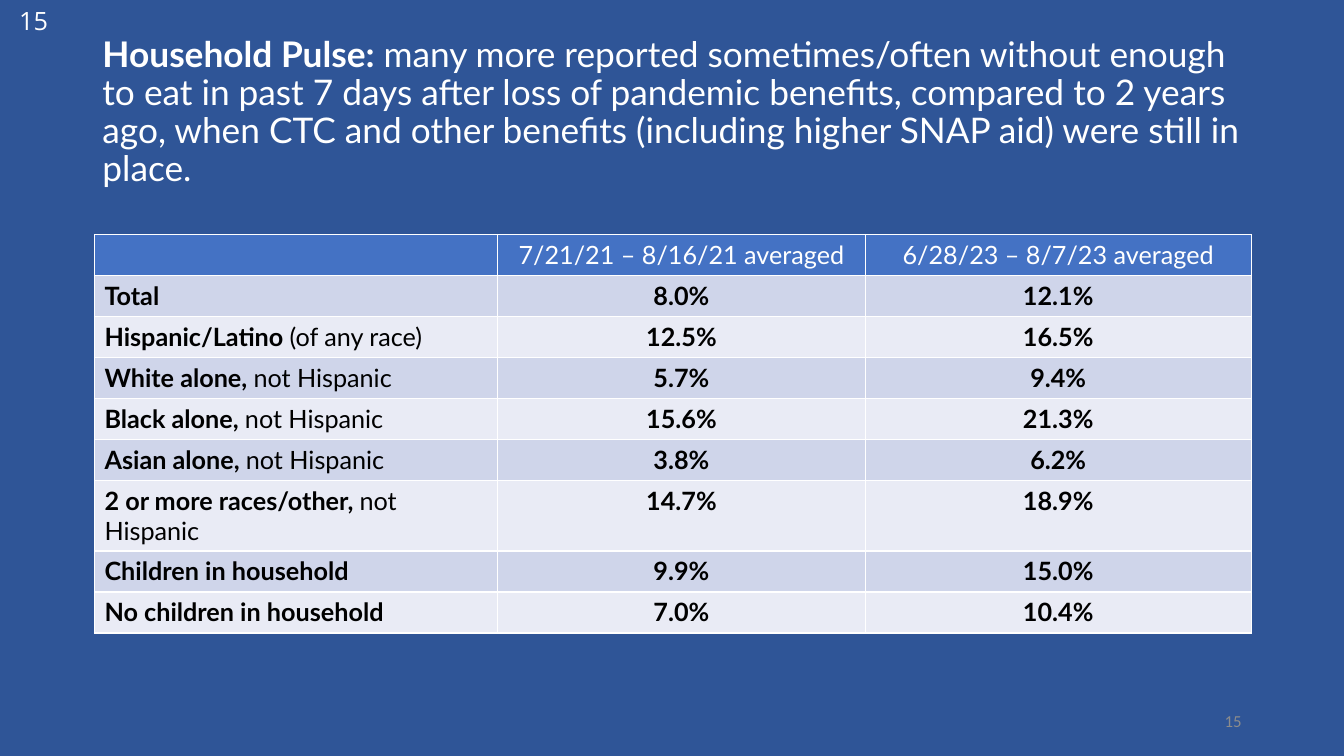
from dataclasses import dataclass

from lxml.etree import SubElement
from pptx import Presentation
from pptx.dml.color import RGBColor
from pptx.enum.text import MSO_ANCHOR as Anchor, MSO_AUTO_SIZE as AutoSize, PP_ALIGN as Align
from pptx.oxml.ns import qn
from pptx.util import Pt

COLOURS = {
    "background": "2F5597",
    "white": "FFFFFF",
    "black": "000000",
    "header": "4472C4",
    "odd_row": "CFD5EA",
    "even_row": "E9EBF5",
    "footer": "8C8C8C",
}
COLUMN_WIDTHS = (288, 262.5, 275.75)
ROW_HEIGHT = 29.3
PERIODS = ("7/21/21 – 8/16/21 averaged", "6/28/23 – 8/7/23 averaged")


@dataclass
class Group:
    name: str
    detail: str
    share_2021: str
    share_2023: str


@dataclass
class PageNumber:
    left: float
    top: float
    width: float
    align: Align
    font: str
    size: float
    colour: str


GROUPS = (
    Group("Total", "", "8.0%", "12.1%"),
    Group("Hispanic/Latino ", "(of any race)", "12.5%", "16.5%"),
    Group("White alone, ", "not Hispanic", "5.7%", "9.4%"),
    Group("Black alone, ", "not Hispanic", "15.6%", "21.3%"),
    Group("Asian alone, ", "not Hispanic", "3.8%", "6.2%"),
    Group("2 or more races/other, ", "not Hispanic", "14.7%", "18.9%"),
    Group("Children in household", "", "9.9%", "15.0%"),
    Group("No children in household", "", "7.0%", "10.4%"),
)
PAGE_NUMBERS = (
    PageNumber(678, 500.5, 216, Align.RIGHT, "Calibri", 12, "footer"),
    PageNumber(0, 0, 48, Align.CENTER, "Open Sans", 18, "white"),
)


def colour(name: str) -> RGBColor:
    return RGBColor.from_string(COLOURS[name])


def set_font(paragraph, family: str, size: float, ink: str) -> None:
    paragraph.font.name = family
    paragraph.font.size = Pt(size)
    paragraph.font.color.rgb = colour(ink)


def add_lead(paragraph, lead: str, rest: str) -> None:
    """Write a bold lead followed by regular text."""
    for words, bold in ((lead, True), (rest, False)):
        if words:
            run = paragraph.add_run()
            run.text = words
            run.font.bold = bold


def style_cell(cell, fill: str) -> None:
    properties = cell._tc.get_or_add_tcPr()
    for side in ("lnL", "lnR", "lnT", "lnB"):
        border = SubElement(properties, qn(f"a:{side}"), w=str(Pt(1)))
        paint = SubElement(border, qn("a:solidFill"))
        SubElement(paint, qn("a:srgbClr"), val=COLOURS["white"])
    cell.fill.solid()
    cell.fill.fore_color.rgb = colour(fill)


def add_title(slide) -> None:
    title = slide.shapes.title
    title.left, title.top, title.width, title.height = Pt(66), Pt(28.75), Pt(828), Pt(104.4)
    frame = title.text_frame
    frame.auto_size = AutoSize.NONE
    frame.vertical_anchor = Anchor.MIDDLE
    heading = frame.paragraphs[0]
    heading.alignment = Align.LEFT
    heading.line_spacing = 0.9
    set_font(heading, "Lato", 25.2, "white")
    add_lead(
        heading,
        "Household Pulse: ",
        "many more reported sometimes/often without enough to eat in past 7 days "
        "after loss of pandemic benefits, compared to 2 years ago, when CTC and other "
        "benefits (including higher SNAP aid) were still in place.",
    )


def add_hunger_table(slide) -> None:
    row_count = len(GROUPS) + 1
    table = slide.shapes.add_table(
        row_count, len(COLUMN_WIDTHS), Pt(67.5), Pt(167.5),
        Pt(sum(COLUMN_WIDTHS)), Pt(ROW_HEIGHT * row_count),
    ).table
    for column, width in zip(table.columns, COLUMN_WIDTHS):
        column.width = Pt(width)
    for row in table.rows:
        row.height = Pt(ROW_HEIGHT)

    # Header row
    for index, period in enumerate(("", *PERIODS)):
        cell = table.cell(0, index)
        style_cell(cell, "header")
        heading = cell.text_frame.paragraphs[0]
        heading.alignment = Align.CENTER
        set_font(heading, "Lato", 18, "white")
        heading.font.bold = False
        if period:
            heading.add_run().text = period

    # One banded row per group
    for number, group in enumerate(GROUPS, 1):
        entries = ((group.name, group.detail), (group.share_2021, ""), (group.share_2023, ""))
        for index, (lead, rest) in enumerate(entries):
            cell = table.cell(number, index)
            style_cell(cell, "odd_row" if number % 2 else "even_row")
            entry = cell.text_frame.paragraphs[0]
            entry.alignment = Align.CENTER if index else Align.LEFT
            set_font(entry, "Lato", 18, "black")
            add_lead(entry, lead, rest)


def add_page_number(slide, number: PageNumber) -> None:
    box = slide.shapes.add_textbox(Pt(number.left), Pt(number.top), Pt(number.width), Pt(28.75))
    frame = box.text_frame
    frame.word_wrap = True
    frame.vertical_anchor = Anchor.MIDDLE
    label = frame.paragraphs[0]
    label.alignment = number.align
    set_font(label, number.font, number.size, number.colour)
    label.add_run().text = "15"


def main() -> None:
    deck = Presentation()
    deck.slide_width, deck.slide_height = Pt(960), Pt(540)
    slide = deck.slides.add_slide(deck.slide_layouts[5])
    slide.background.fill.solid()
    slide.background.fill.fore_color.rgb = colour("background")
    add_title(slide)
    add_hunger_table(slide)
    for number in PAGE_NUMBERS:
        add_page_number(slide, number)
    deck.save("out.pptx")


if __name__ == "__main__":
    main()
